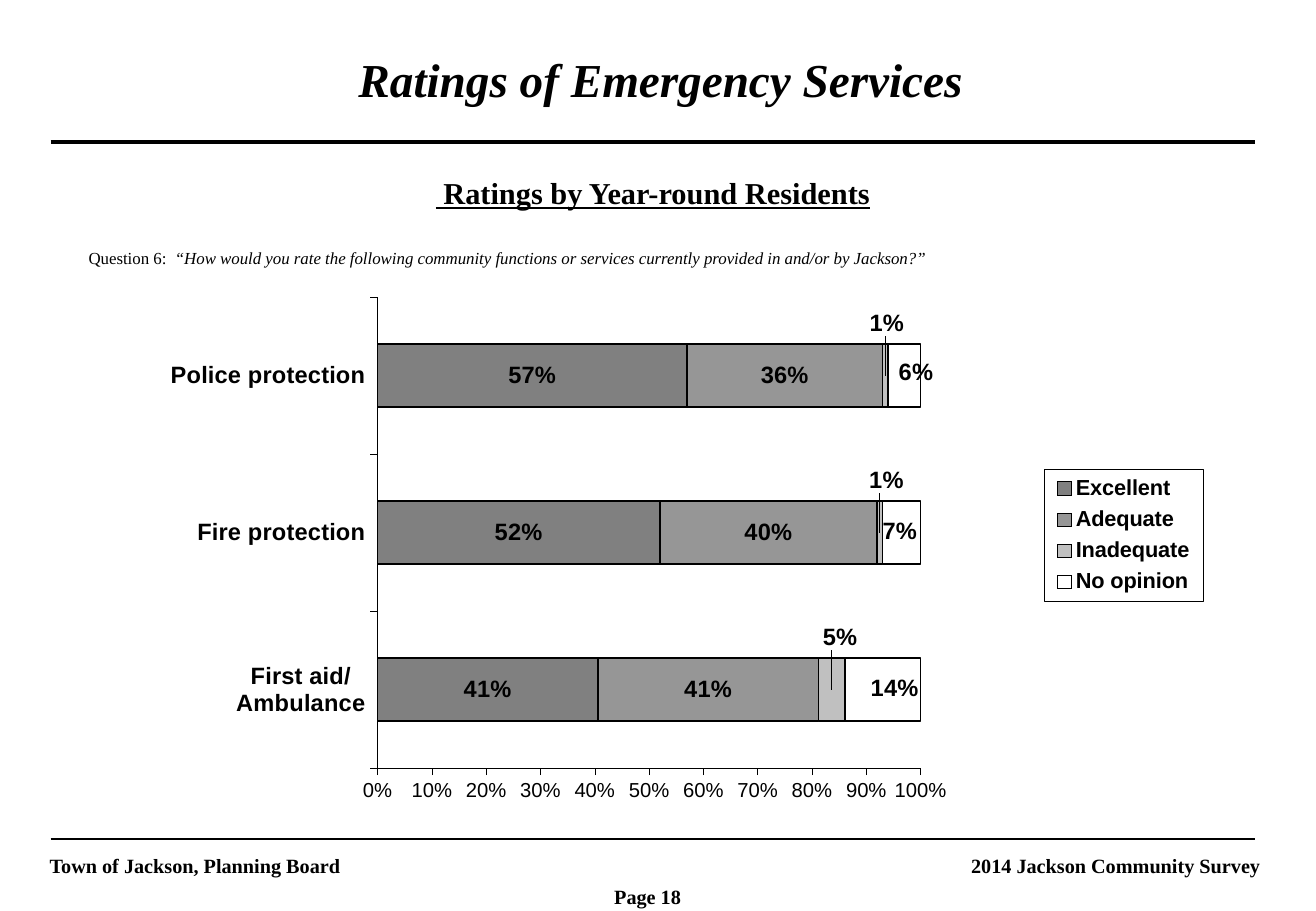
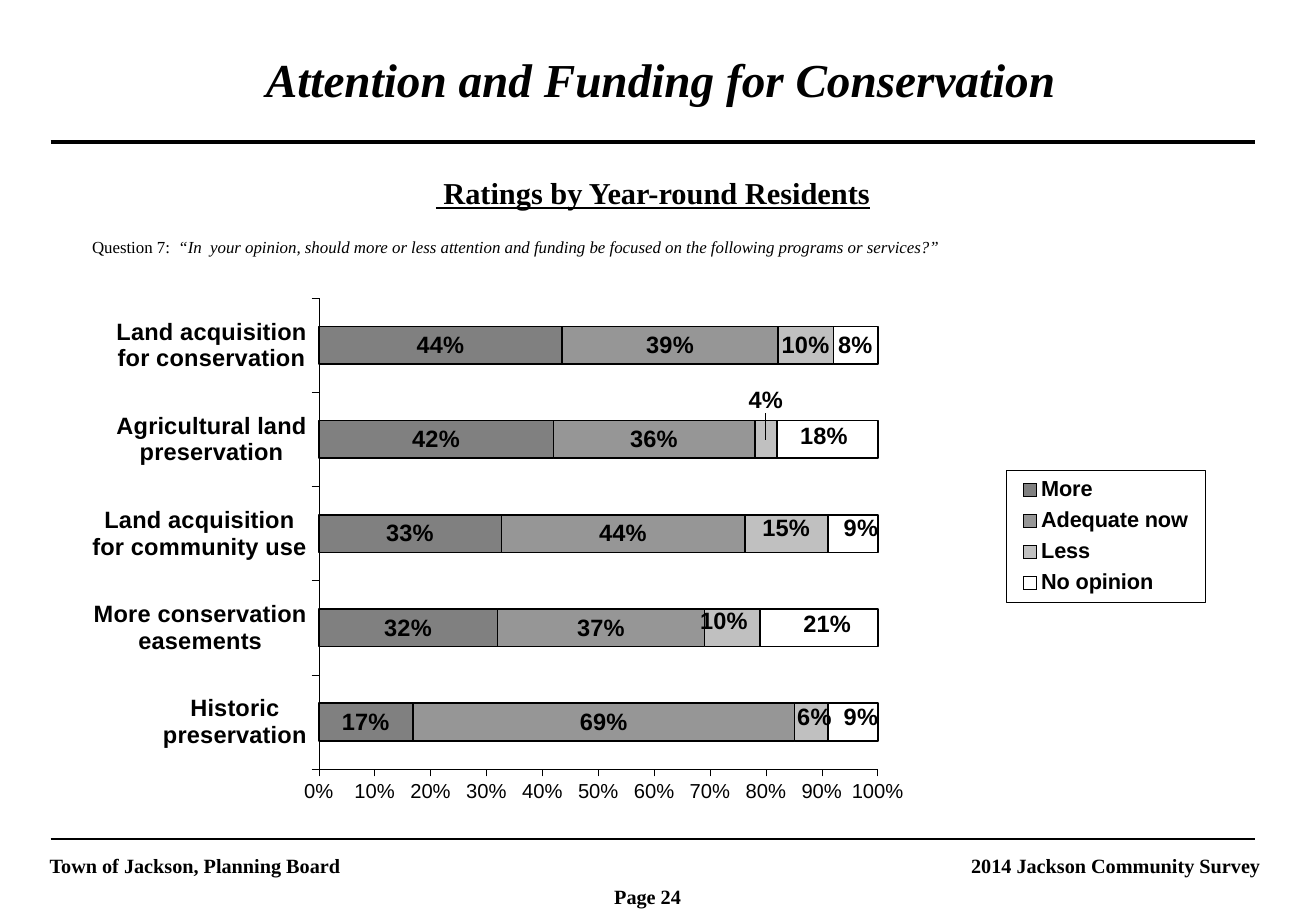
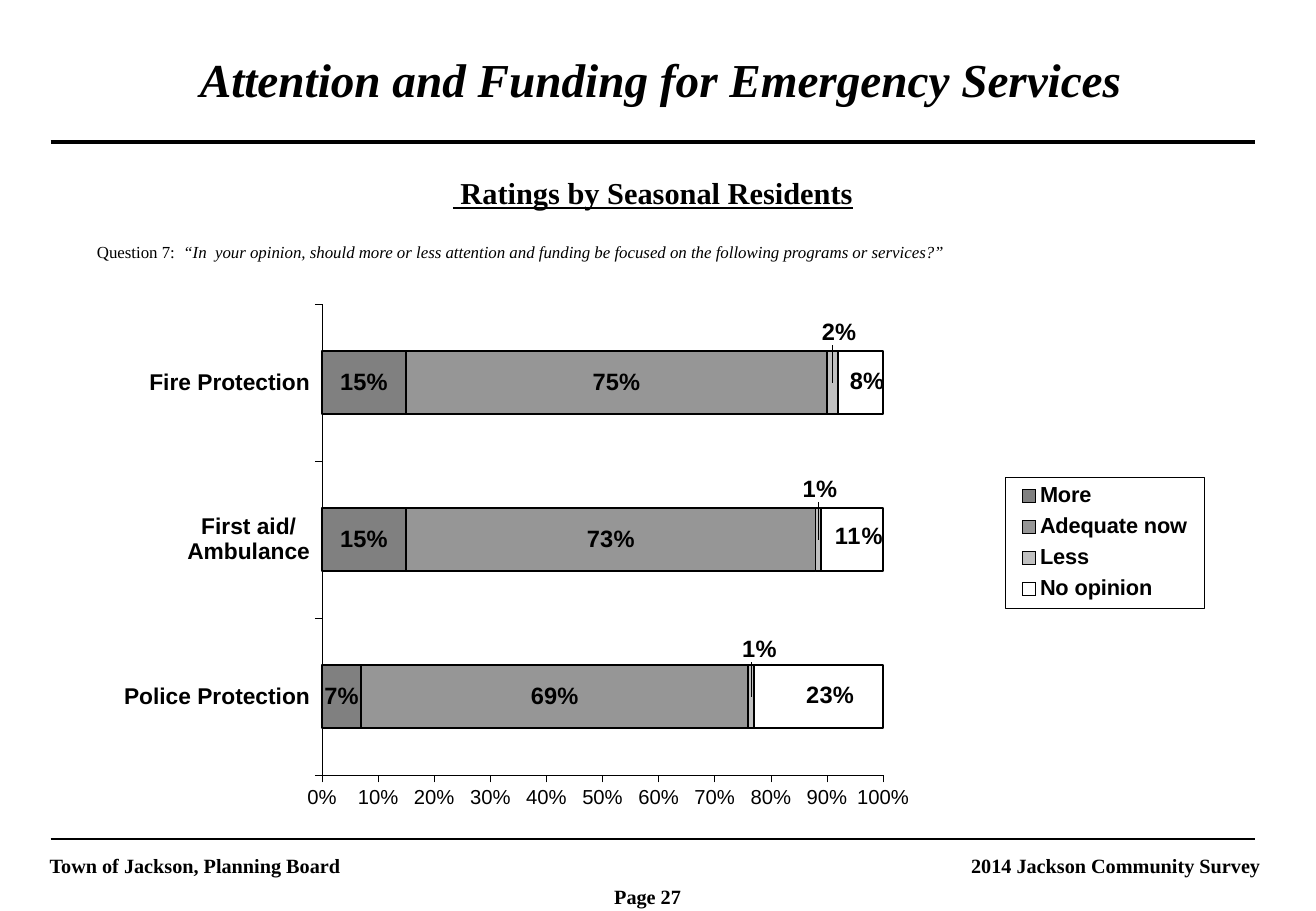
from dataclasses import dataclass

from lxml import etree
from pptx import Presentation
from pptx.chart.data import CategoryChartData
from pptx.dml.color import RGBColor
from pptx.enum.chart import XL_CHART_TYPE, XL_LABEL_POSITION, XL_LEGEND_POSITION, XL_TICK_MARK
from pptx.enum.shapes import MSO_CONNECTOR, PP_PLACEHOLDER
from pptx.enum.text import MSO_ANCHOR, MSO_AUTO_SIZE, PP_ALIGN
from pptx.oxml import parse_xml
from pptx.oxml.ns import nsdecls, qn
from pptx.util import Pt

STACKED_BARS = XL_CHART_TYPE.BAR_STACKED_100
LABEL_CENTER = XL_LABEL_POSITION.CENTER
LEGEND_RIGHT = XL_LEGEND_POSITION.RIGHT
TICK_OUTSIDE = XL_TICK_MARK.OUTSIDE
STRAIGHT = MSO_CONNECTOR.STRAIGHT
TITLE_TYPE = PP_PLACEHOLDER.TITLE
ANCHOR_TOP = MSO_ANCHOR.TOP
NO_FIT = MSO_AUTO_SIZE.NONE
LEFT, CENTER, RIGHT = PP_ALIGN.LEFT, PP_ALIGN.CENTER, PP_ALIGN.RIGHT

BLACK = "000000"
SERIES_COLOURS = ("808080", "969696", "C0C0C0", "FFFFFF")
SERIF, SANS = "Times New Roman", "Arial"
PERCENT = "0%"

SLIDE_WIDTH, SLIDE_HEIGHT = 780, 540
RULE_LEFT, RULE_RIGHT = 30, 744
TITLE_BOX = (34.5, 30, 714, 37.5)
SUBTITLE_BOX = (30, 102, 714, 27)
PAGE_BOX = (357, 522, 66, 20)
CHART_RIGHT, CHART_HEIGHT = 719, 324.7
LEGEND_RIGHT_EDGE, LEGEND_TOP, LEGEND_HEIGHT = 714, 112, 78

FUNDING_QUESTION = ("Question 7:", "  “In  your opinion, should more or less attention and funding "
                    "be focused on the following programs or services?”")
FUNDING_SERIES = ("More", "Adequate now", "Less", "No opinion")


@dataclass
class Survey:
    """One slide's content; label_shifts maps series to {category: (dx, dy)} in points."""
    title: str
    subtitle: str
    page: int
    question: tuple
    question_at: tuple
    chart_at: tuple
    plot_x: float
    plot_width: float
    legend_width: float
    series_names: tuple
    rows: dict
    label_shifts: dict
    category_size: float = 14


SURVEYS = [
    Survey(
        "Ratings of Emergency Services", " Ratings by Year-round Residents", 18,
        ("Question 6:", "  “How would you rate the following community functions or services "
         "currently provided in and/or by Jackson?”"),
        (45.4, 144.7), (100, 166.3), 0.2, 0.52, 95,
        ("Excellent", "Adequate", "Inadequate", "No opinion"),
        {"First aid/\nAmbulance": (0.41, 0.41, 0.05, 0.14),
         "Fire protection": (0.52, 0.4, 0.01, 0.07),
         "Police protection": (0.57, 0.36, 0.01, 0.06)},
        {2: {0: (5, -31), 1: (4, -31), 2: (1, -31)},
         3: {0: (7, -1), 1: (-1, -1), 2: (7, -2)}}),
    Survey(
        "Attention and Funding for Conservation", " Ratings by Year-round Residents", 24,
        FUNDING_QUESTION, (47.5, 138.2), (54.7, 167), 0.2, 0.5, 118, FUNDING_SERIES,
        {"Historic preservation": (0.17, 0.69, 0.06, 0.09),
         "More conservation easements": (0.32, 0.37, 0.1, 0.21),
         "Land acquisition for community use": (0.33, 0.44, 0.15, 0.09),
         "Agricultural land preservation": (0.42, 0.36, 0.04, 0.18),
         "Land acquisition for conservation": (0.44, 0.39, 0.1, 0.08)},
        {2: {0: (2, -3), 1: (-5, -4), 2: (0, -3), 3: (0, -23)},
         3: {0: (5, -3), 1: (5, -2), 2: (5, -3), 3: (-2, -2)}}),
    Survey(
        "Attention and Funding for Emergency Services", " Ratings by Seasonal Residents", 27,
        FUNDING_QUESTION, (50.4, 141.1), (67, 170.6), 0.19, 0.51, 118, FUNDING_SERIES,
        {"Police Protection": (0.07, 0.69, 0.01, 0.23),
         "First aid/\nAmbulance": (0.15, 0.73, 0.01, 0.11),
         "Fire Protection": (0.15, 0.75, 0.02, 0.08)},
        {2: {0: (5, -28), 1: (1, -30), 2: (4, -30)},
         3: {0: (7, -1), 1: (4, -2), 2: (4, -1)}},
        category_size=13.5),
]


def colour(hex_string):
    return RGBColor.from_string(hex_string)


def set_font(font, name, size, bold=False):
    font.name, font.size, font.bold = name, Pt(size), bold
    font.color.rgb = colour(BLACK)


def set_line(line, width):
    line.color.rgb = colour(BLACK)
    line.width = Pt(width)


def format_paragraph(paragraph, size, bold=True, align=LEFT):
    paragraph.alignment = align
    paragraph.line_spacing = 0.9
    set_font(paragraph.font, SERIF, size, bold)


def add_text(slide, box, text, size, bold=True, align=LEFT):
    shape = slide.shapes.add_textbox(*map(Pt, box))
    shape.text_frame.word_wrap = True
    paragraph = shape.text_frame.paragraphs[0]
    paragraph.text = text
    format_paragraph(paragraph, size, bold, align)
    return shape


def add_rule(slide, top, width):
    rule = slide.shapes.add_connector(STRAIGHT, Pt(RULE_LEFT), Pt(top), Pt(RULE_RIGHT), Pt(top))
    set_line(rule.line, width)
    etree.SubElement(rule.element.spPr, qn("a:effectLst"))
    return rule


def prepare_layout(layout):
    """Keep only the title placeholder and place it."""
    for placeholder in list(layout.placeholders):
        if placeholder.placeholder_format.type == TITLE_TYPE:
            placeholder.left, placeholder.top, placeholder.width, placeholder.height = map(Pt, TITLE_BOX)
        else:
            placeholder.element.getparent().remove(placeholder.element)


def move_frame_to_layout(slide, layout):
    """Draw the rules and footers, then hand them to the layout that all slides share."""
    frame = [
        add_rule(slide, 84.2, 2),
        add_rule(slide, 497.5, 1),
        add_text(slide, (22.3, 504, 282, 20), "Town of Jackson, Planning Board", 12),
        add_text(slide, (490.3, 504, 264, 20), "2014 Jackson Community Survey", 12, align=RIGHT),
    ]
    layout_title = layout.placeholders[0].element
    for shape in frame:
        layout_title.addprevious(shape.element)


def add_headings(slide, survey):
    title = slide.shapes.title
    title.text_frame.text = survey.title
    title.text_frame.vertical_anchor = ANCHOR_TOP
    title.text_frame.auto_size = NO_FIT
    paragraph = title.text_frame.paragraphs[0]
    format_paragraph(paragraph, 28, align=CENTER)
    paragraph.font.italic = True

    subtitle = add_text(slide, SUBTITLE_BOX, survey.subtitle, 18, align=CENTER)
    subtitle.text_frame.paragraphs[0].font.underline = True

    number, wording = survey.question
    question = add_text(slide, (*survey.question_at, 654, 18), number, 10, bold=False)
    run = question.text_frame.paragraphs[0].add_run()
    run.text = wording
    run.font.italic = True


def manual_layout(**values):
    children = "".join(f'<c:{name} val="{value}"/>' for name, value in values.items())
    return parse_xml(f'<c:layout {nsdecls("c")}><c:manualLayout>{children}</c:manualLayout></c:layout>')


def replace_layout(parent, predecessor, layout):
    """Put the layout in its schema place: after predecessor, or first when there is none."""
    for old in parent.findall(qn("c:layout")):
        parent.remove(old)
    if predecessor is None:
        parent.insert(0, layout)
    else:
        parent.find(qn(predecessor)).addnext(layout)


def format_axes(chart, category_size):
    for axis, size, bold in ((chart.category_axis, category_size, True),
                             (chart.value_axis, 12, False)):
        axis.major_tick_mark = TICK_OUTSIDE
        axis.has_major_gridlines = False
        set_line(axis.format.line, 0.25)
        set_font(axis.tick_labels.font, SANS, size, bold)
    value_axis = chart.value_axis
    value_axis.minimum_scale, value_axis.maximum_scale, value_axis.major_unit = 0, 1, 0.1
    value_axis.tick_labels.number_format = PERCENT
    value_axis.tick_labels.number_format_is_linked = False


def format_series(chart, label_shifts, width, height):
    for index, (series, fill) in enumerate(zip(chart.plots[0].series, SERIES_COLOURS)):
        series.format.fill.solid()
        series.format.fill.fore_color.rgb = colour(fill)
        set_line(series.format.line, 1)
        labels = series.data_labels
        labels.show_value = True
        labels.number_format = PERCENT
        labels.number_format_is_linked = False
        set_font(labels.font, SANS, 14, True)
        for category, (dx, dy) in label_shifts.get(index, {}).items():
            label = series.points[category].data_label
            label.position = LABEL_CENTER
            set_font(label.font, SANS, 14, True)
            element = chart.element.xpath(
                f"c:chart/c:plotArea/c:barChart/c:ser[{index + 1}]"
                f"/c:dLbls/c:dLbl[c:idx/@val={category}]")[0]
            replace_layout(element, "c:idx",
                           manual_layout(x=round(dx / width, 4), y=round(dy / height, 4)))


def format_legend(chart, left, width, chart_width, chart_height):
    chart.has_legend = True
    legend = chart.legend
    legend.position = LEGEND_RIGHT
    legend.include_in_layout = False
    set_font(legend.font, SANS, 12.9, True)
    element = chart.element.xpath("c:chart/c:legend")[0]
    replace_layout(element, "c:legendPos", manual_layout(
        xMode="edge", yMode="edge", x=round(left / chart_width, 3),
        y=round(LEGEND_TOP / chart_height, 3), w=round(width / chart_width, 3),
        h=round(LEGEND_HEIGHT / chart_height, 3)))
    border = parse_xml(
        f'<c:spPr {nsdecls("c", "a")}><a:solidFill><a:srgbClr val="FFFFFF"/></a:solidFill>'
        f'<a:ln w="{Pt(0.25)}"><a:solidFill><a:srgbClr val="{BLACK}"/></a:solidFill></a:ln></c:spPr>')
    element.find(qn("c:txPr")).addprevious(border)


def add_survey_chart(slide, survey):
    left, top = survey.chart_at
    width, height = CHART_RIGHT - left, CHART_HEIGHT
    data = CategoryChartData(number_format=PERCENT)
    data.categories = survey.rows.keys()
    for name, values in zip(survey.series_names, zip(*survey.rows.values())):
        data.add_series(name, values)
    chart = slide.shapes.add_chart(STACKED_BARS, Pt(left), Pt(top), Pt(width), Pt(height), data).chart
    chart.has_title = False
    set_font(chart.font, SANS, 18, True)
    plot = chart.plots[0]
    plot.gap_width, plot.overlap, plot.vary_by_categories = 150, 100, False
    format_axes(chart, survey.category_size)
    format_series(chart, survey.label_shifts, width, height)
    format_legend(chart, LEGEND_RIGHT_EDGE - survey.legend_width - left,
                  survey.legend_width, width, height)
    replace_layout(chart.element.xpath("c:chart/c:plotArea")[0], None, manual_layout(
        layoutTarget="inner", xMode="edge", yMode="edge",
        x=survey.plot_x, y=0.03, w=survey.plot_width, h=0.86))


def main():
    presentation = Presentation()
    presentation.slide_width, presentation.slide_height = Pt(SLIDE_WIDTH), Pt(SLIDE_HEIGHT)
    layout = presentation.slide_layouts.get_by_name("Title Only")
    prepare_layout(layout)
    for number, survey in enumerate(SURVEYS):
        slide = presentation.slides.add_slide(layout)
        if number == 0:
            move_frame_to_layout(slide, layout)
        add_headings(slide, survey)
        add_survey_chart(slide, survey)
        add_text(slide, PAGE_BOX, f"Page {survey.page}", 12)
    presentation.save("out.pptx")


if __name__ == "__main__":
    main()
